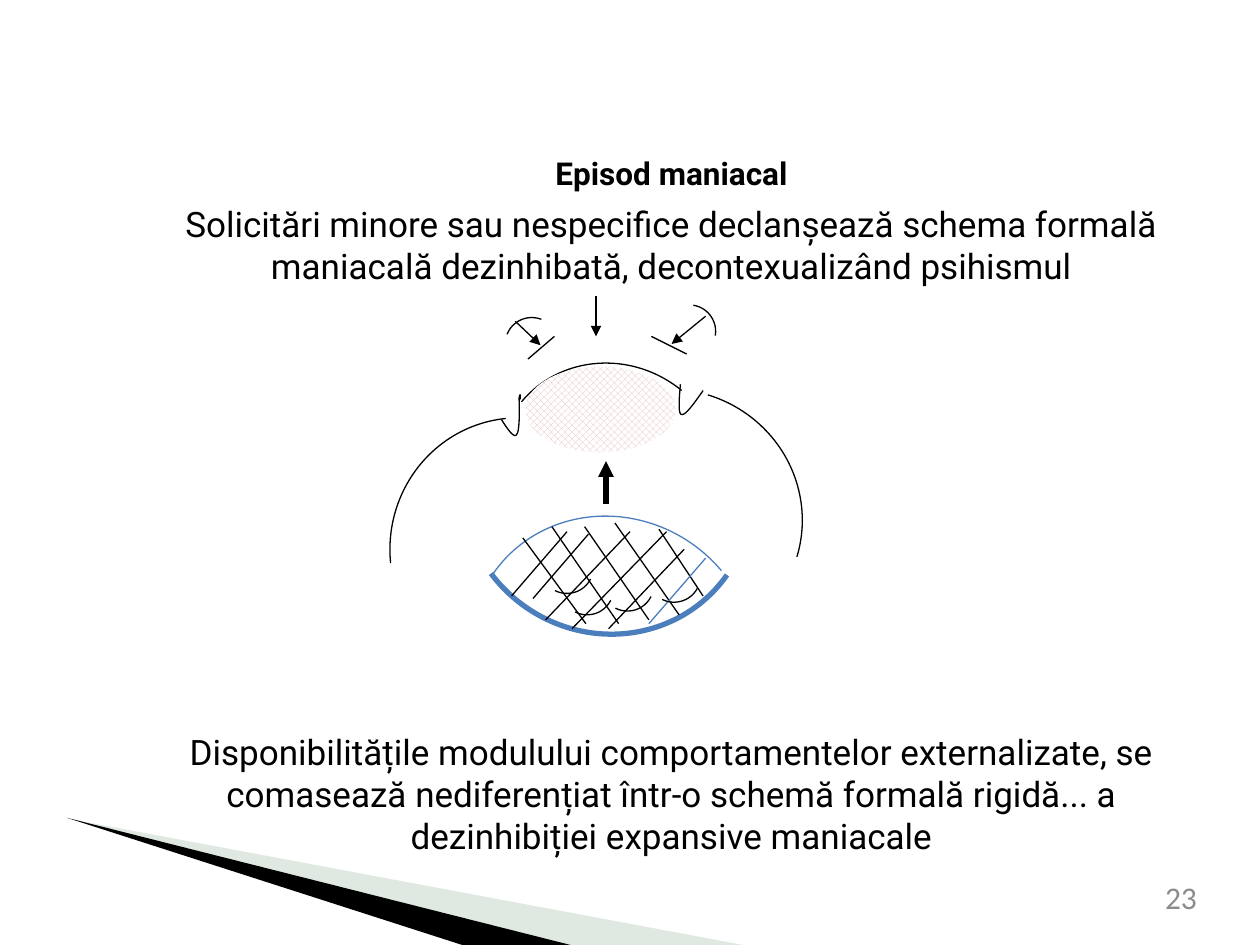
from lxml import etree
from pptx import Presentation
from pptx.dml.color import RGBColor
from pptx.enum.dml import MSO_PATTERN
from pptx.enum.shapes import MSO_CONNECTOR, MSO_SHAPE
from pptx.enum.text import MSO_ANCHOR, MSO_AUTO_SIZE, PP_ALIGN
from pptx.oxml.ns import qn
from pptx.util import Inches, Pt

STRAIGHT = MSO_CONNECTOR.STRAIGHT
ARC, OVAL = MSO_SHAPE.ARC, MSO_SHAPE.OVAL
DIAMOND = MSO_PATTERN.OUTLINED_DIAMOND
CENTER, RIGHT = PP_ALIGN.CENTER, PP_ALIGN.RIGHT
TOP = MSO_ANCHOR.TOP
NO_FIT = MSO_AUTO_SIZE.NONE

COLORS = {
    "black": "000000", "white": "FFFFFF", "blue": "4B7EBC",
    "pink": "E6B9B8", "sage": "B3CAB5", "gray": "8C8C8C",
}
THIN, THICK = 0.75, 3

# Text, size, bold, space before (the last gap leaves room for the drawing)
TEXTS = [
    ("Episod maniacal", 18, True, 0),
    ("Solicitări minore sau nespecifice declanșează schema formală "
     "maniacală dezinhibată, decontexualizând psihismul", 20, False, 6),
    ("Disponibilitățile modulului comportamentelor externalizate, se "
     "comasează nediferențiat într-o schemă formală rigidă... a "
     "dezinhibiției expansive maniacale", 20, False, 254),
]

# Left, top, width, height, rotation
SIDES = [(3.07, 3.34, 2.1, 2.05, 264.2), (4.27, 3.09, 2.1, 2.05, 16.9)]
SMALL = 0.42
HOOKS = [  # left, top, rotation
    (4.77, 4.43, 116.9), (5.14, 4.36, 116.9), (4.29, 4.29, 116.9),
    (4.45, 4.46, 116.9), (4.01, 2.52, 291.4), (5.26, 2.42, 9.1),
]

# x1, y1, x2, y2
INPUTS = [(4.09, 2.55, 4.29, 2.74), (4.73, 2.35, 4.73, 2.67),
          (5.6, 2.51, 5.33, 2.73)]
BARS = [(4.19, 2.85, 4.4, 2.67), (5.17, 2.67, 5.45, 2.81)]
MESH = [
    (4.5, 4.22, 4.06, 4.73), (4.67, 4.24, 4.23, 4.75),
    (5, 4.22, 4.33, 4.92), (5.29, 4.22, 4.54, 4.99),
    (5.43, 4.36, 4.83, 4.99), (4.15, 4.27, 4.65, 4.95),
    (4.38, 4.18, 4.91, 4.95), (4.64, 4.18, 5.15, 4.92),
    (4.88, 4.15, 5.39, 4.88), (5.23, 4.2, 5.58, 4.73),
]

# Start point, then three control points for each curve
FOLDS = [
    [(3.98, 3.33), (4.03, 3.41), (4.08, 3.48), (4.1, 3.45),
     (4.13, 3.42), (4.12, 3.2), (4.12, 3.16),
     (4.13, 3.11), (4.13, 3.14), (4.13, 3.17)],
    [(5.4, 3.05), (5.39, 3.17), (5.38, 3.29), (5.41, 3.29),
     (5.44, 3.3), (5.51, 3.2), (5.58, 3.1)],
]


def color(name):
    return RGBColor.from_string(COLORS[name])


def stroke(shape, name="black", width=THIN):
    shape.line.color.rgb = color(name)
    shape.line.width = Pt(width)


def add_line(slide, ends, name="black", width=THIN, arrow=False):
    line = slide.shapes.add_connector(STRAIGHT, *map(Inches, ends))
    stroke(line, name, width)
    props = line._element.spPr
    if arrow:
        etree.SubElement(props.find(qn("a:ln")), qn("a:tailEnd"),
                         type="triangle")
    etree.SubElement(props, qn("a:effectLst"))


def add_arc(slide, box, turn, name="black", width=THIN, span=None):
    arc = slide.shapes.add_shape(ARC, *map(Inches, box))
    arc.shadow.inherit = False
    arc.rotation = turn
    for i, value in enumerate(span or ()):
        arc.adjustments[i] = value
    arc.fill.background()
    stroke(arc, name, width)


def add_path(slide, points, close):
    spots = [(Inches(x), Inches(y)) for x, y in points]
    pen = slide.shapes.build_freeform(*spots[0])
    pen.add_line_segments(spots[1:], close=close)
    shape = pen.convert_to_shape()
    shape.shadow.inherit = False
    return shape


def add_wedge(slide, points, name, alpha=100):
    wedge = add_path(slide, points, True)
    wedge.fill.solid()
    wedge.fill.fore_color.rgb = color(name)
    wedge.line.fill.background()
    if alpha < 100:
        tint = wedge._element.spPr.find(".//" + qn("a:srgbClr"))
        etree.SubElement(tint, qn("a:alpha"), val=str(alpha * 1000))


def bezier(a, b, c, d, t):
    u = 1 - t
    return tuple(u**3 * p + 3 * u * u * t * q + 3 * u * t * t * r + t**3 * s
                 for p, q, r, s in zip(a, b, c, d))


def add_fold(slide, knots, steps=12):
    points = [knots[0]]
    for i in range(0, len(knots) - 1, 3):
        points += [bezier(*knots[i:i + 4], n / steps)
                   for n in range(1, steps + 1)]
    fold = add_path(slide, points, False)
    fold.fill.background()
    stroke(fold)


def add_core(slide):
    core = slide.shapes.add_shape(OVAL, *map(Inches, (4.17, 2.91, 1.19, 0.68)))
    core.shadow.inherit = False
    core.fill.patterned()
    core.fill.pattern = DIAMOND
    core.fill.fore_color.rgb = color("pink")
    core.fill.back_color.rgb = color("white")
    core.line.fill.background()


def set_font(para, face, size, name, bold=False):
    font = para.font
    font.name, font.size, font.bold = face, Pt(size), bold
    font.color.rgb = color(name)


def fill_body(body):
    body.left, body.top, body.width, body.height = map(
        Inches, (1.08, 1.17, 8.5, 5.74))
    frame = body.text_frame
    frame.word_wrap = True
    frame.auto_size = NO_FIT
    frame.vertical_anchor = TOP
    for i, (text, size, bold, gap) in enumerate(TEXTS):
        para = frame.add_paragraph() if i else frame.paragraphs[0]
        props = para._p.get_or_add_pPr()
        props.set("marL", "0")
        props.set("indent", "0")
        etree.SubElement(props, qn("a:buNone"))
        para.text = text
        para.alignment = CENTER
        para.space_before = Pt(gap)
        set_font(para, "Roboto", size, "black", bold)


def add_number(slide):
    box = slide.shapes.add_textbox(*map(Inches, (7.2, 6.97, 2.3, 0.38)))
    frame = box.text_frame
    frame.word_wrap = True
    frame.margin_left = frame.margin_right = 0
    frame.margin_top = frame.margin_bottom = 0
    para = frame.paragraphs[0]
    para.text = "23"
    para.alignment = RIGHT
    set_font(para, "Calibri", 18, "gray")


def main():
    deck = Presentation()
    deck.slide_width, deck.slide_height = Inches(10), Inches(7.5)
    slide = deck.slides.add_slide(deck.slide_layouts[1])
    title = slide.shapes.title._element
    title.getparent().remove(title)
    fill_body(slide.placeholders[1])

    add_wedge(slide, [(0.55, 6.5), (4.52, 7.5), (5.9, 7.5)], "sage", 40)
    add_wedge(slide, [(0.53, 6.49), (3.67, 7.5), (4.53, 7.5)], "black")
    add_number(slide)

    add_arc(slide, (3.98, 2.85, 1.74, 1.83), 303.2, span=(165.51, 4.12))
    for ends in INPUTS:
        add_line(slide, ends, arrow=True)
    add_core(slide)
    for knots in FOLDS:
        add_fold(slide, knots)
    for *box, turn in SIDES:
        add_arc(slide, box, turn)

    lens = (162, 11.66)
    add_arc(slide, (3.69, 2.73, 2.25, 2.33), 125, "blue", THICK, lens)
    add_arc(slide, (3.78, 4.05, 2.17, 2.3), 302.6, "blue", span=lens)
    for ends in MESH + BARS:
        add_line(slide, ends)
    add_line(slide, (5.6, 4.43, 5.15, 4.95), "blue")
    add_line(slide, (4.81, 4, 4.81, 3.66), width=THICK, arrow=True)
    for left, top, turn in HOOKS:
        add_arc(slide, (left, top, SMALL, SMALL), turn)
    deck.save("out.pptx")


if __name__ == "__main__":
    main()
